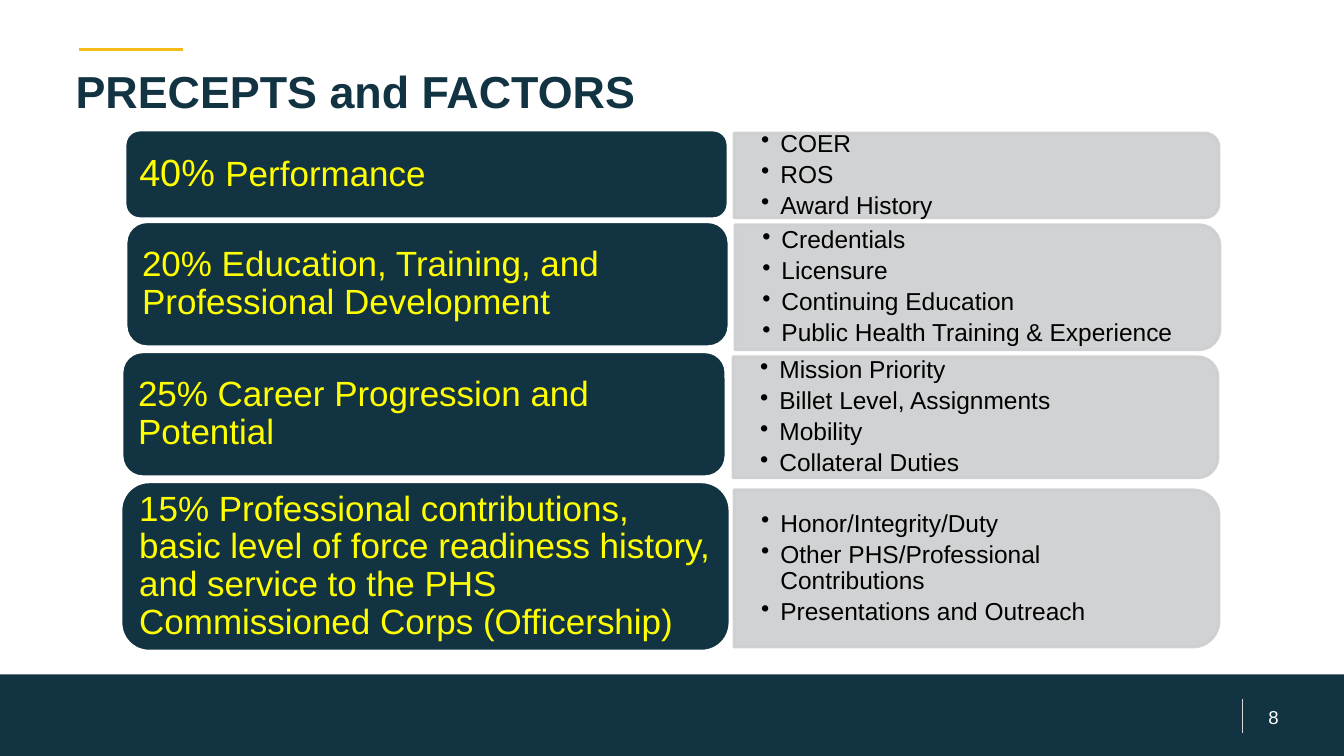
from lxml import etree
from pptx import Presentation
from pptx.dml.color import RGBColor
from pptx.enum.shapes import MSO_CONNECTOR as Connector, MSO_SHAPE as Preset
from pptx.enum.text import MSO_ANCHOR as Anchor, PP_ALIGN as Align
from pptx.oxml.ns import qn
from pptx.util import Inches, Pt

NAVY = RGBColor(0x12, 0x33, 0x42)
GOLD = RGBColor(0xF4, 0xBA, 0x18)
PANEL_GRAY = RGBColor(0xCC, 0xCE, 0xCF)
RULE_GRAY = RGBColor(0xD9, 0xD9, 0xD9)
YELLOW = RGBColor(0xFF, 0xFF, 0x00)
WHITE = RGBColor(0xFF, 0xFF, 0xFF)
BLACK = RGBColor(0x00, 0x00, 0x00)

PANEL_WIDTH = 4.81
CORNER_INSET = 0.049

FACTORS = [
    {"card": (1.24, 1.29, 5.98, 0.88), "panel": (7.28, 1.32, 0.84),
     "label": [("40% ", 27), ("Performance", 25)],
     "points": ["COER", "ROS", "Award History"]},
    {"card": (1.25, 2.2, 5.98, 1.24), "panel": (7.29, 2.23, 1.24),
     "label": [("20% Education, Training, and Professional Development", 25)],
     "points": ["Credentials", "Licensure", "Continuing Education",
                "Public Health Training & Experience"]},
    {"card": (1.21, 3.49, 5.99, 1.24), "panel": (7.27, 3.54, 1.2),
     "label": [("25% Career Progression and Potential", 25)],
     "points": ["Mission Priority", "Billet Level, Assignments", "Mobility",
                "Collateral Duties"]},
    {"card": (1.2, 4.78, 6.04, 1.68), "panel": (7.28, 4.86, 1.56),
     "label": [("15% Professional contributions, basic level of force readiness "
                "history, and service to the PHS Commissioned Corps (Officership)", 25)],
     "points": ["Honor/Integrity/Duty", "Other PHS/Professional Contributions",
                "Presentations and Outreach"]},
]


def write_text(paragraph, runs, color, bold=False, align=Align.LEFT,
               spacing=1.0, after=0, bullet=False):
    """Write (text, size) runs into a paragraph with the given format."""
    if bullet:
        properties = paragraph._p.get_or_add_pPr()
        properties.set("marL", str(Inches(0.19)))
        properties.set("indent", str(-Inches(0.19)))
        etree.SubElement(properties, qn("a:buChar")).set("char", "•")
    paragraph.alignment = align
    paragraph.line_spacing = spacing
    paragraph.space_after = Pt(after)
    for text, size in runs:
        run = paragraph.add_run()
        run.text = text
        run.font.name = "Arial"
        run.font.size = Pt(size)
        run.font.bold = bold
        run.font.color.rgb = color


class SlideBuilder:
    """Hold the current slide and draw its elements in one style."""

    def __init__(self, slide):
        """Keep the slide to draw on."""
        self.slide = slide

    def rule(self, start, end, color, width):
        """Draw a straight line."""
        line = self.slide.shapes.add_connector(
            Connector.STRAIGHT, *map(Inches, start + end))
        line.line.color.rgb = color
        line.line.width = Pt(width)
        etree.SubElement(line._element.spPr, qn("a:effectLst"))

    def block(self, preset, box, fill, outline=None):
        """Draw a filled shape, with a 2 pt outline if a colour is given."""
        shape = self.slide.shapes.add_shape(preset, *map(Inches, box))
        shape.shadow.inherit = False
        shape.fill.solid()
        shape.fill.fore_color.rgb = fill
        if outline is None:
            shape.line.fill.background()
        else:
            shape.line.color.rgb = outline
            shape.line.width = Pt(2)
        return shape

    def text(self, box, paragraphs, insets, anchor=Anchor.MIDDLE, **style):
        """Add a wrapped text box with one paragraph per list of runs."""
        frame = self.slide.shapes.add_textbox(*map(Inches, box)).text_frame
        frame.word_wrap = True
        frame.vertical_anchor = anchor
        frame.margin_left = frame.margin_right = Inches(insets[0])
        frame.margin_top = frame.margin_bottom = Inches(insets[1])
        for index, runs in enumerate(paragraphs):
            paragraph = frame.add_paragraph() if index else frame.paragraphs[0]
            write_text(paragraph, runs, **style)

    def panel(self, left, top, height, points):
        """Draw a gray panel rounded on its right side, with bullets."""
        shift = (PANEL_WIDTH - height) / 2
        shape = self.block(Preset.ROUND_2_SAME_RECTANGLE,
                           (left + shift, top - shift, height, PANEL_WIDTH),
                           PANEL_GRAY, PANEL_GRAY)
        shape.rotation = 90
        for color in shape._element.spPr.iter(qn("a:srgbClr")):
            etree.SubElement(color, qn("a:alpha")).set("val", "90000")
        inset = CORNER_INSET * height
        self.text((left, top + inset, PANEL_WIDTH - inset, height - 2 * inset),
                  [[(point, 17.5)] for point in points], (0.27, 0.14),
                  color=BLACK, spacing=0.9, after=3.2, bullet=True)

    def card(self, box, label):
        """Draw a navy card with its weight and factor."""
        self.block(Preset.ROUNDED_RECTANGLE, box, NAVY, WHITE)
        left, top, width, height = box
        inset = CORNER_INSET * height
        self.text((left + inset, top + inset, width - 2 * inset, height - 2 * inset),
                  [label], (0.1, 0.05), color=YELLOW, spacing=0.9)


def main():
    """Build and save the slide."""
    presentation = Presentation()
    presentation.slide_width = Inches(13.33)
    presentation.slide_height = Inches(7.5)
    builder = SlideBuilder(presentation.slides.add_slide(presentation.slide_layouts[6]))
    builder.rule((0.78, 0.49), (1.82, 0.49), GOLD, 2.5)
    builder.block(Preset.RECTANGLE, (0, 6.69, 13.33, 0.81), NAVY)
    builder.text((12.24, 6.97, 0.78, 0.28), [[("8", 13.3)]], (0.13, 0.07),
                 color=WHITE, align=Align.CENTER)
    builder.rule((12.32, 6.93), (12.32, 7.27), RULE_GRAY, 0.75)
    builder.text((0.67, 0.53, 12, 1.07), [[("PRECEPTS and FACTORS", 32)]],
                 (0.08, 0.1), Anchor.TOP, color=NAVY, bold=True)
    for factor in FACTORS:
        builder.panel(*factor["panel"], factor["points"])
        builder.card(factor["card"], factor["label"])
    presentation.save("out.pptx")


if __name__ == "__main__":
    main()
